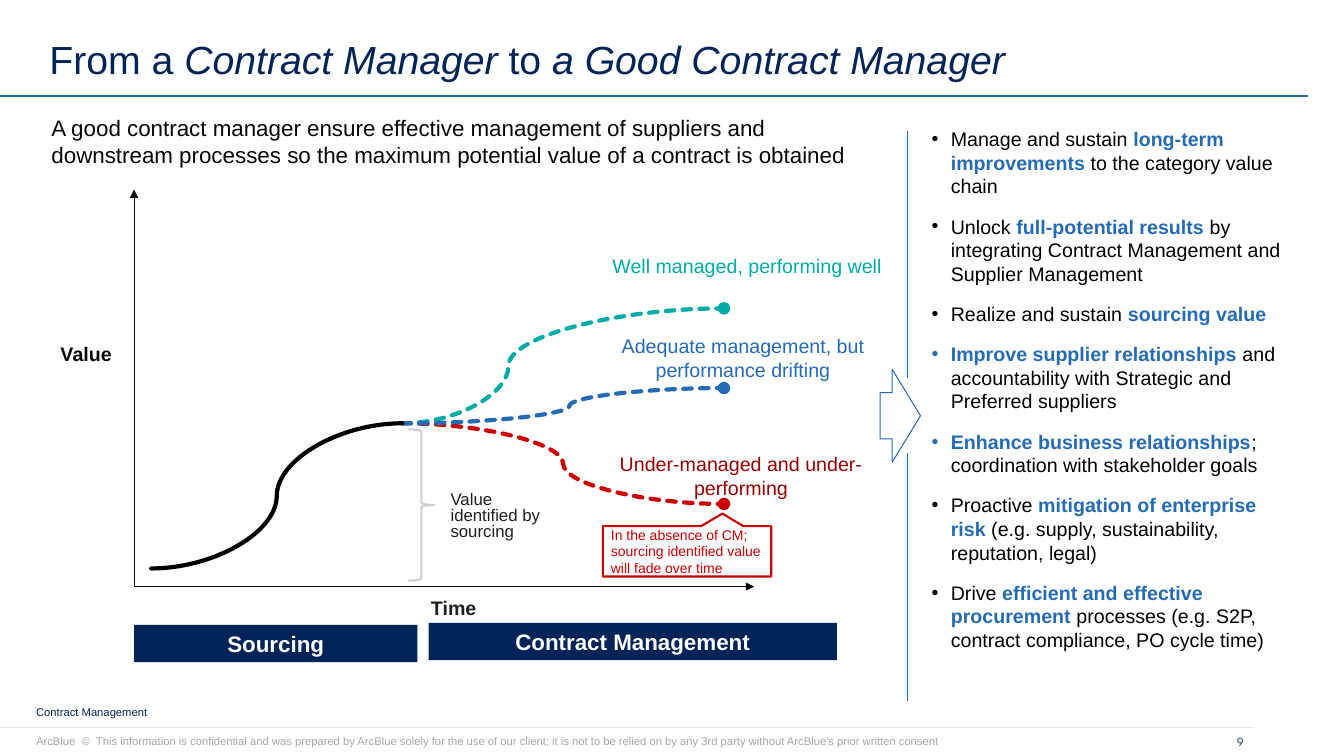
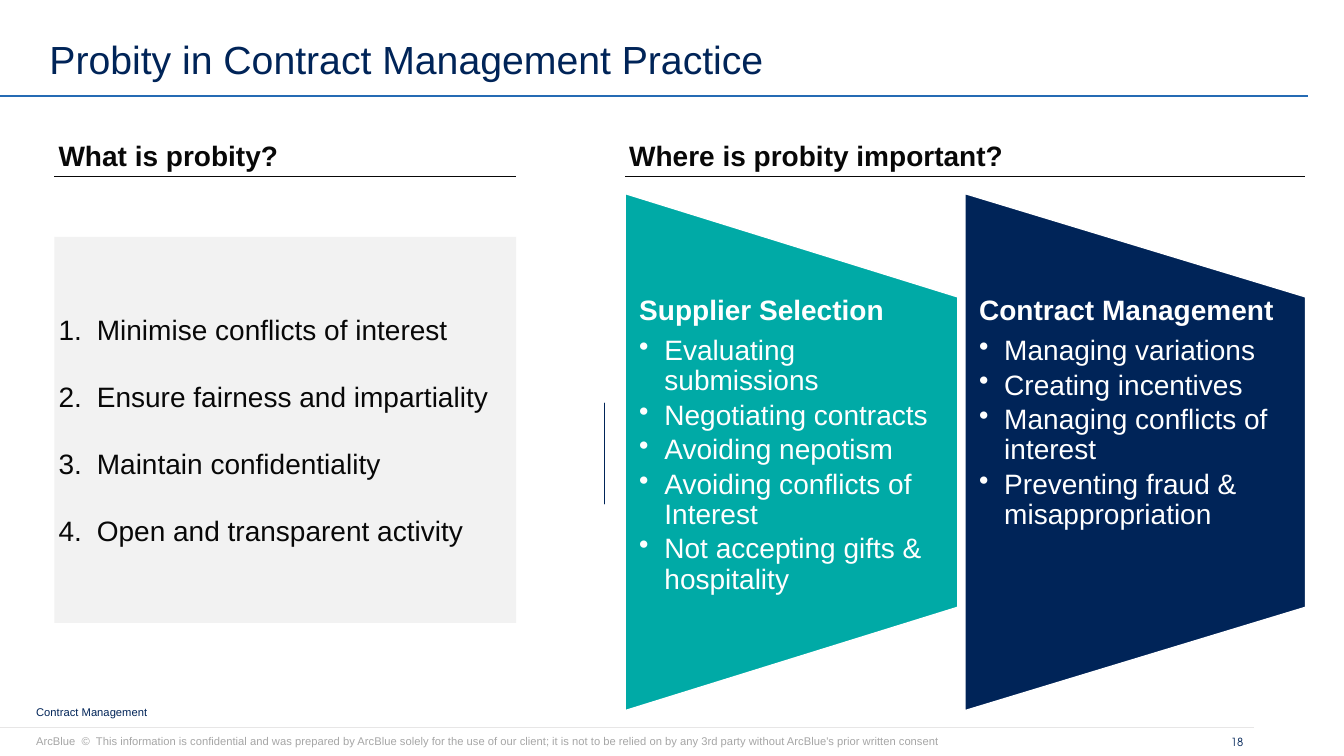
"""Build two contract management slides."""
import typing

import lxml.etree
import pptx
import pptx.dml.color
import pptx.enum.dml
import pptx.enum.shapes
import pptx.enum.text
import pptx.oxml.ns
import pptx.util

Inches = pptx.util.Inches
RGBColor = pptx.dml.color.RGBColor
SHAPE = pptx.enum.shapes.MSO_SHAPE
CONNECTOR = pptx.enum.shapes.MSO_CONNECTOR
ALIGN = pptx.enum.text.PP_ALIGN
ANCHOR = pptx.enum.text.MSO_ANCHOR

NAVY = RGBColor(0x00, 0x24, 0x58)
BLUE = RGBColor(0x25, 0x6B, 0xB4)
TEAL = RGBColor(0x00, 0xAA, 0xA6)
RED = RGBColor(0xCC, 0x00, 0x00)
DARK_RED = RGBColor(0x99, 0x00, 0x00)
BLACK = RGBColor(0x00, 0x00, 0x00)
INK = RGBColor(0x08, 0x08, 0x08)
CHARCOAL = RGBColor(0x1F, 0x1F, 0x1F)
GREY = RGBColor(0xA6, 0xA6, 0xA6)
BRACE_GREY = RGBColor(0xD0, 0xCE, 0xCE)
RULE_GREY = RGBColor(0xE7, 0xE6, 0xE6)
PALE = RGBColor(0xF2, 0xF2, 0xF2)
WHITE = RGBColor(0xFF, 0xFF, 0xFF)

DISCLAIMER = (
    "ArcBlue  ©  This information is confidential and was prepared by ArcBlue solely for the use of "
    "our client; it is not to be relied on by any 3rd party without ArcBlue's prior written consent"
)
LEAD = (
    "A good contract manager ensure effective management of suppliers and downstream processes "
    "so the maximum potential value of a contract is obtained"
)
BENEFITS = [
    "Manage and sustain *long-term improvements* to the category value chain",
    "Unlock *full-potential results* by integrating Contract Management and Supplier Management",
    "Realize and sustain *sourcing value*",
    "*Improve supplier relationships* and accountability with Strategic and Preferred suppliers",
    "*Enhance business relationships*; coordination with stakeholder goals",
    "Proactive *mitigation of enterprise risk* (e.g. supply, sustainability, reputation, legal)",
    "Drive *efficient and effective procurement* processes (e.g. S2P, contract compliance, PO cycle time)",
]
PRINCIPLES = [
    "Minimise conflicts of interest",
    "Ensure fairness and impartiality",
    "Maintain confidentiality",
    "Open and transparent activity",
]
SUPPLIER_POINTS = [
    "Evaluating submissions",
    "Negotiating contracts",
    "Avoiding nepotism",
    "Avoiding conflicts of Interest",
    "Not accepting gifts & hospitality",
]
CONTRACT_POINTS = [
    "Managing variations",
    "Creating incentives",
    "Managing conflicts of interest",
    "Preventing fraud & misappropriation",
]


class Box(typing.NamedTuple):
    """A rectangle in inches."""

    left: float
    top: float
    width: float
    height: float

    def inside(self, left, top, width, height):
        """Return a box whose position is relative to this one."""
        return Box(self.left + left, self.top + top, width, height)

    def point(self, x, y):
        """Return a slide position given relative to this box."""
        return self.left + x, self.top + y

    def lengths(self):
        """Return the four values as lengths."""
        return [Inches(value) for value in self]


def add_xml(parent, tag, **attributes):
    """Append a drawing element to a parent element."""
    return lxml.etree.SubElement(parent, pptx.oxml.ns.qn(tag), attributes)


def write(frame, texts, *, size, color=INK, bold=False, font="Arial", align=ALIGN.LEFT, line=1.0,
          before=0, after=0, bullet=None, indent=0, emphasis=None):
    """Append paragraphs to a frame, formatting parts between asterisks with emphasis."""
    for text in [texts] if isinstance(texts, str) else texts:
        first = not frame.paragraphs[-1].runs
        para = frame.paragraphs[0] if first else frame.add_paragraph()
        properties = para._p.get_or_add_pPr()
        properties.set("marL", str(Inches(indent)))
        properties.set("indent", str(-Inches(indent)))
        if bullet == "number":
            add_xml(properties, "a:buAutoNum", type="arabicPeriod")
        elif bullet:
            add_xml(properties, "a:buChar", char=bullet)
        else:
            add_xml(properties, "a:buNone")
        para.alignment = align
        para.line_spacing = line
        para.space_before = pptx.util.Pt(0 if first else before)
        para.space_after = pptx.util.Pt(after)
        for index, part in enumerate(text.split("*")):
            if not part:
                continue
            span = para.add_run()
            span.text = part
            look = dict(color=color, bold=bold, italic=False)
            if index % 2:
                look.update(emphasis)
            span.font.name = font
            span.font.size = pptx.util.Pt(size)
            span.font.bold = look["bold"]
            span.font.italic = look["italic"]
            span.font.color.rgb = look["color"]


def set_frame(shape, anchor=ANCHOR.TOP, inset=(0.1, 0.05)):
    """Prepare the text frame of a shape and return it."""
    frame = shape.text_frame
    frame.word_wrap = True
    frame.auto_size = pptx.enum.text.MSO_AUTO_SIZE.NONE
    frame.vertical_anchor = anchor
    frame.margin_left = frame.margin_right = Inches(inset[0])
    frame.margin_top = frame.margin_bottom = Inches(inset[1])
    return frame


def add_text(page, box, texts, anchor=ANCHOR.TOP, inset=(0.1, 0.05), **look):
    """Add a text box and return its frame."""
    frame = set_frame(page.shapes.add_textbox(*box.lengths()), anchor, inset)
    write(frame, texts, **look)
    return frame


def fill_placeholder(page, number, box, texts, anchor=ANCHOR.TOP, inset=(0.1, 0.05), **look):
    """Move a placeholder, write its text and return it."""
    holder = next(item for item in page.placeholders if item.placeholder_format.idx == number)
    holder.left, holder.top, holder.width, holder.height = box.lengths()
    write(set_frame(holder, anchor, inset), texts, **look)
    return holder


def paint(shape, fill=None, line=None, weight=0.75):
    """Set the fill and outline of a shape."""
    shape.shadow.inherit = False
    for target, color in ((shape.fill, fill), (shape.line.fill, line)):
        if color is None:
            target.background()
        else:
            target.solid()
            target.fore_color.rgb = color
    if line is not None:
        shape.line.width = pptx.util.Pt(weight)


def add_shape(page, kind, box, **look):
    """Add a painted preset shape."""
    shape = page.shapes.add_shape(kind, *box.lengths())
    paint(shape, **look)
    return shape


def add_line(page, start, end, color, weight=0.75, kind=CONNECTOR.STRAIGHT, bend=None,
             dashed=False, rounded=False, head=None, tail=None):
    """Add a connector between two points."""
    ends = [Inches(value) for value in (*start, *end)]
    connector = page.shapes.add_connector(kind, *ends)
    connector.line.color.rgb = color
    connector.line.width = pptx.util.Pt(weight)
    if dashed:
        connector.line.dash_style = pptx.enum.dml.MSO_LINE.SQUARE_DOT
    properties = connector._element.spPr
    outline = properties.find(pptx.oxml.ns.qn("a:ln"))
    if rounded:
        outline.set("cap", "rnd")
    for tag, mark in (("a:headEnd", head), ("a:tailEnd", tail)):
        if mark:
            add_xml(outline, tag, type=mark)
    if bend is not None:
        geometry = properties.find(pptx.oxml.ns.qn("a:prstGeom"))
        guides = geometry.find(pptx.oxml.ns.qn("a:avLst"))
        if guides is None:
            guides = add_xml(geometry, "a:avLst")
        add_xml(guides, "a:gd", name="adj1", fmla=f"val {round(bend * 100000)}")
    add_xml(properties, "a:effectLst")


def add_page(deck, layout, title, number):
    """Add a slide with the shared title, rules and footer."""
    page = deck.slides.add_slide(deck.slide_layouts.get_by_name(layout))
    fill_placeholder(page, 0, Box(0.39, 0, 12.56, 0.87), title, ANCHOR.BOTTOM, size=28, color=NAVY,
                     line=0.9, emphasis={"italic": True})
    add_line(page, (0, 0.95), (12.97, 0.95), BLUE, 1.5)
    add_line(page, (0, 7.22), (12.44, 7.22), RULE_GREY)
    add_text(page, Box(0.26, 6.95, 9.36, 0.24), "Contract Management", size=8, color=NAVY)
    add_text(page, Box(0.26, 7.24, 9.36, 0.24), DISCLAIMER, size=8, color=GREY)
    add_text(page, Box(11.92, 7.24, 0.51, 0.24), number, ANCHOR.MIDDLE, size=8, color=NAVY,
             font="TeX Gyre Adventor", align=ALIGN.RIGHT)
    return page


def add_value_diagram(page, box):
    """Draw value over time, with the axes filling the box."""
    fork = box.point(2.66, 2.32)
    curve = dict(weight=3, kind=CONNECTOR.CURVE, rounded=True)
    for color, height, bend in ((RED, 3.12, 0.5), (TEAL, 1.18, 0.33), (BLUE, 1.97, 0.52)):
        add_line(page, fork, box.point(5.85, height), color, bend=bend, dashed=True, tail="oval", **curve)
    add_line(page, box.point(0.17, 3.76), fork, BLACK, bend=0.5, **curve)
    add_line(page, box.point(0, 0), box.point(box.width, box.height), INK, 0.5, CONNECTOR.ELBOW,
             bend=0, head="triangle", tail="triangle")
    add_shape(page, SHAPE.RIGHT_BRACE, box.inside(2.72, 2.38, 0.26, 1.5), line=BRACE_GREY, weight=1.5)

    outcomes = (
        ("Well managed, performing well", TEAL, (4.64, 0.5, 2.88, 0.51)),
        ("Adequate management, but performance drifting", BLUE, (4.6, 1.44, 2.88, 0.46)),
        ("Under-managed and under-performing", DARK_RED, (4.64, 2.53, 2.76, 0.62)),
    )
    for text, color, place in outcomes:
        add_text(page, box.inside(*place), text, ANCHOR.MIDDLE, (0, 0), size=14, color=color,
                 align=ALIGN.CENTER)

    axis_name = dict(size=14, bold=True, align=ALIGN.CENTER, line=0.8)
    add_text(page, box.inside(2.34, 4.03, 1.66, 0.24), "Time", color=CHARCOAL, **axis_name)
    add_text(page, box.inside(-0.96, 1.51, 0.97, 0.29), "Value", **axis_name)
    add_text(page, box.inside(3.04, 2.96, 1.31, 0.35), "Value identified by sourcing", size=12,
             color=CHARCOAL, line=0.8)

    callout = add_shape(page, SHAPE.RECTANGULAR_CALLOUT, box.inside(4.65, 3.34, 1.67, 0.5),
                        fill=WHITE, line=RED, weight=1.5)
    callout.adjustments[0], callout.adjustments[1] = 0.21, -0.75
    write(set_frame(callout, ANCHOR.MIDDLE, (0.08, 0.08)),
          "In the absence of CM; sourcing identified value will fade over time", size=10, color=RED)

    phases = (("Sourcing", (0, 4.32, 2.81, 0.37)), ("Contract Management", (2.92, 4.3, 4.05, 0.37)))
    for text, place in phases:
        bar = add_shape(page, SHAPE.RECTANGLE, box.inside(*place), fill=NAVY)
        write(set_frame(bar), text, size=16, color=WHITE, bold=True, align=ALIGN.CENTER)


def add_divider(page, box):
    """Draw a vertical rule interrupted by an arrow centred in the box."""
    axis, middle = 0.27, box.height / 2
    add_line(page, box.point(axis, 0), box.point(axis, middle - 0.37), BLUE)
    add_line(page, box.point(axis, middle + 0.37), box.point(axis, box.height), BLUE)
    arrow = add_shape(page, SHAPE.RIGHT_ARROW, box.inside(0, middle - 0.46, box.width, 0.92), line=BLUE)
    arrow.adjustments[0], arrow.adjustments[1] = 0.5, 0.7


def add_heading(page, number, box, text):
    """Write an underlined section heading in a placeholder."""
    fill_placeholder(page, number, box, text, ANCHOR.BOTTOM, (0.04, 0.04), size=20, bold=True)
    add_line(page, box.point(0, box.height), box.point(box.width, box.height), INK)


def add_chevron(page, box, stroke=0.05):
    """Draw a thin chevron that fills the box."""
    tip = box.height / 2
    outline = [(stroke, 0), (box.width, tip), (stroke, box.height), (0, box.height),
               (box.width - stroke, tip), (0, 0)]
    points = [box.point(*corner) for corner in outline]
    builder = page.shapes.build_freeform(*points[0], scale=Inches(1))
    builder.add_line_segments(points[1:], close=True)
    paint(builder.convert_to_shape(), fill=NAVY, line=NAVY)


def add_panel(page, box, color, heading, points):
    """Draw a panel tapering to the right with a heading and bullets."""
    shift = (box.height - box.width) / 2
    upright = box.inside(-shift, shift, box.height, box.width)
    panel = add_shape(page, SHAPE.FLOWCHART_MANUAL_OPERATION, upright, fill=color, line=WHITE, weight=1)
    panel.rotation = 270
    look = dict(size=20, color=WHITE, line=0.9)
    frame = add_text(page, box.inside(0, 1.02, box.width, 3.08), heading, inset=(0.14, 0), bold=True,
                     after=4, **look)
    write(frame, points, before=3, bullet="•", indent=0.25, **look)


def add_manager_slide(deck):
    """Build the slide on good contract managers."""
    page = add_page(deck, "Two Content", "From a *Contract Manager *to *a Good Contract Manager*", "9")
    fill_placeholder(page, 1, Box(0.41, 1.08, 8.46, 0.65), LEAD, size=16)
    fill_placeholder(page, 2, Box(9.2, 1.22, 3.6, 5.33), BENEFITS, inset=(0.04, 0.04), size=14,
                     color=BLACK, before=12, bullet="•", indent=0.19,
                     emphasis={"color": BLUE, "bold": True})
    add_value_diagram(page, Box(1.33, 1.88, 6.15, 3.94))
    add_divider(page, Box(8.73, 1.3, 0.4, 5.65))


def add_probity_slide(deck):
    """Build the slide on probity."""
    page = add_page(deck, "Comparison", "Probity in Contract Management Practice", "18")
    add_heading(page, 1, Box(0.54, 1.33, 4.58, 0.42), "What is probity?")
    add_heading(page, 3, Box(6.2, 1.33, 6.74, 0.42), "Where is probity important?")
    principles = fill_placeholder(page, 2, Box(0.54, 2.35, 4.58, 3.83), PRINCIPLES, ANCHOR.MIDDLE,
                                  (0.04, 0.04), size=20, before=24, bullet="number", indent=0.38)
    principles.fill.solid()
    principles.fill.fore_color.rgb = PALE
    unused = next(item for item in page.placeholders if item.placeholder_format.idx == 4)
    unused._element.getparent().remove(unused._element)
    add_chevron(page, Box(5.5, 3.69, 0.28, 1.06))
    add_panel(page, Box(6.2, 1.92, 3.3, 5.13), TEAL, "Supplier Selection", SUPPLIER_POINTS)
    add_panel(page, Box(9.57, 1.92, 3.38, 5.13), NAVY, "Contract Management", CONTRACT_POINTS)


def main():
    """Build and save the deck."""
    deck = pptx.Presentation()
    deck.slide_width, deck.slide_height = Inches(13.33), Inches(7.5)
    add_manager_slide(deck)
    add_probity_slide(deck)
    deck.save("out.pptx")


if __name__ == "__main__":
    main()
